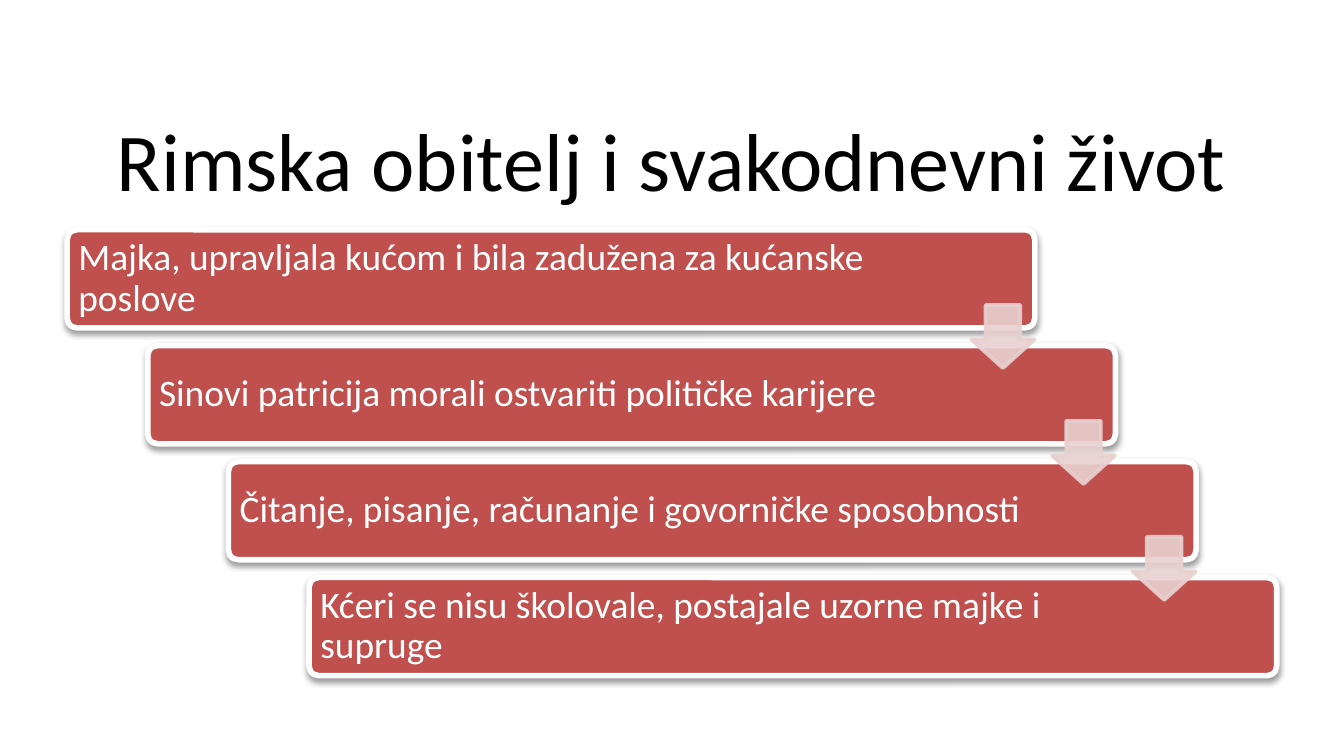
from dataclasses import dataclass

from lxml.etree import SubElement
from pptx import Presentation
from pptx.dml.color import RGBColor
from pptx.enum.shapes import MSO_SHAPE as Form
from pptx.enum.text import MSO_ANCHOR as Anchor, PP_ALIGN as Align
from pptx.oxml import parse_xml
from pptx.oxml.ns import nsdecls, qn
from pptx.util import Pt

FONT = "Calibri"
RED, PINK, WHITE, BLACK = "C0504D", "E8D0D0", "FFFFFF", "000000"
STEP_X, STEP_Y = 43.2, 62.1
BAR_W, BAR_H, ARROW = 518.4, 52.6, 33.8


@dataclass
class Step:
    text: str
    width: float


STEPS = [
    Step("Majka, upravljala kućom i bila zadužena za kućanske poslove", 460),
    Step("Sinovi patricija morali ostvariti političke karijere", 441),
    Step("Čitanje, pisanje, računanje i govorničke sposobnosti", 441),
    Step("Kćeri se nisu školovale, postajale uzorne majke i supruge", 441),
]


def color(code: str) -> RGBColor:
    return RGBColor.from_string(code)


def add_form(slide, form, x: float, y: float, w: float, h: float,
             fill: str, line: str, weight: float, adjust: list[float]):
    shape = slide.shapes.add_shape(form, Pt(x), Pt(y), Pt(w), Pt(h))
    shape.shadow.inherit = False
    shape.fill.solid()
    shape.fill.fore_color.rgb = color(fill)
    shape.line.color.rgb = color(line)
    shape.line.width = Pt(weight)
    for i, value in enumerate(adjust):
        shape.adjustments[i] = value
    return shape


def add_text(slide, text: str, x: float, y: float, w: float, h: float,
             size: float, code: str, align: Align, inset: float) -> None:
    frame = slide.shapes.add_textbox(Pt(x), Pt(y), Pt(w), Pt(h)).text_frame
    frame.word_wrap = True
    frame.vertical_anchor = Anchor.MIDDLE
    frame.margin_left = frame.margin_right = Pt(inset)
    frame.margin_top = frame.margin_bottom = Pt(inset)
    para = frame.paragraphs[0]
    para.text = text
    para.alignment = align
    para.line_spacing = 0.9
    para.font.name = FONT
    para.font.size = Pt(size)
    para.font.color.rgb = color(code)


def add_bar(slide, step: Step, x: float, y: float) -> None:
    bar = add_form(slide, Form.ROUNDED_RECTANGLE, x, y, BAR_W, BAR_H,
                   RED, WHITE, 3, [0.1])
    effects = bar._element.spPr.find(qn("a:effectLst"))
    effects.append(parse_xml(
        f'<a:outerShdw {nsdecls("a")} blurRad="{Pt(3.1)}" dist="{Pt(1.6)}" '
        f'dir="5400000" rotWithShape="0"><a:srgbClr val="{BLACK}">'
        '<a:alpha val="38000"/></a:srgbClr></a:outerShdw>'))
    add_text(slide, step.text, x, y, step.width, BAR_H, 20, WHITE, Align.LEFT, 6)


def add_arrow(slide, x: float, y: float) -> None:
    arrow = add_form(slide, Form.DOWN_ARROW, x, y, ARROW, ARROW,
                     PINK, PINK, 2, [0.55, 0.45])
    for tint in arrow._element.spPr.iter(qn("a:srgbClr")):
        SubElement(tint, qn("a:alpha"), val="90000")


def main() -> None:
    deck = Presentation()
    deck.slide_width, deck.slide_height = Pt(720), Pt(405)
    slide = deck.slides.add_slide(deck.slide_layouts[6])
    add_text(slide, "Rimska obitelj i svakodnevni život",
             36, 60.5, 648, 56, 44, BLACK, Align.CENTER, 3.6)
    for i, step in enumerate(STEPS):
        add_bar(slide, step, 36 + i * STEP_X, 123.1 + i * STEP_Y)
    for i in range(len(STEPS) - 1):
        add_arrow(slide, 520.4 + i * STEP_X, 163.4 + i * STEP_Y)
    deck.save("out.pptx")


if __name__ == "__main__":
    main()
